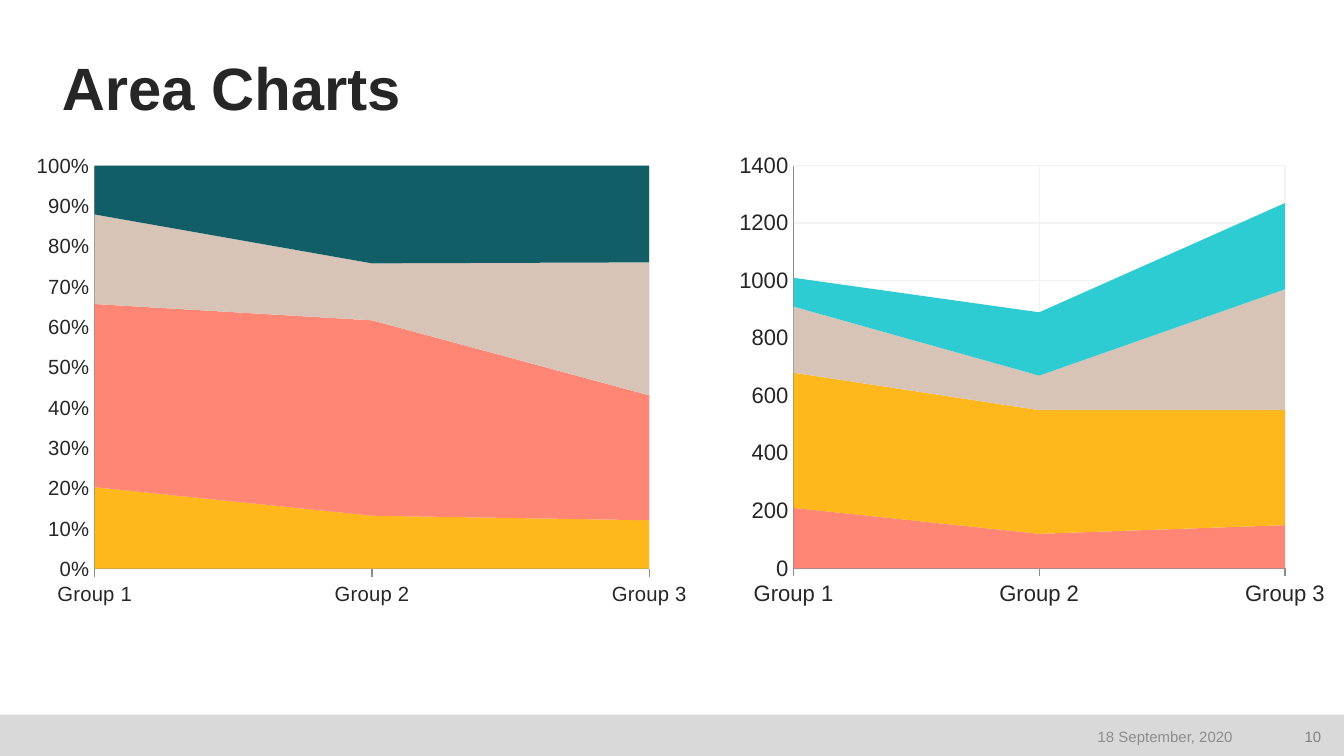
"""Build the Area Charts slide with two stacked area charts."""
from lxml import etree
from pptx import Presentation
from pptx.chart.data import CategoryChartData
from pptx.dml.color import RGBColor
from pptx.enum import chart as ch, shapes, text
from pptx.oxml.ns import qn
from pptx.util import Cm, Pt


def color(value):
    return RGBColor.from_string(value)


def add_label(words, box, size, ink, align, anchor, bold=False, inset=0):
    frame = slide.shapes.add_textbox(*map(Cm, box)).text_frame
    frame.word_wrap = True
    frame.vertical_anchor = anchor
    frame.margin_left = frame.margin_right = Cm(inset)
    frame.margin_top = frame.margin_bottom = Cm(inset / 2)
    line = frame.paragraphs[0]
    line.text = words
    line.alignment = align
    line.font.name = "Arial"
    line.font.size = Pt(size)
    line.font.bold = bold
    line.font.color.rgb = color(ink)
    return line


deck = Presentation()
deck.slide_width, deck.slide_height = Cm(25.4), Cm(14.29)
slide = deck.slides.add_slide(deck.slide_layouts[6])

footer = slide.shapes.add_shape(
    shapes.MSO_SHAPE.RECTANGLE, 0, Cm(13.51), deck.slide_width, Cm(0.78))
footer.shadow.inherit = False
footer.fill.solid()
footer.fill.fore_color.rgb = color("D9D9D9")
footer.line.fill.background()

title = add_label("Area Charts", (1.17, 1.02, 23.11, 1.32), 32, "262626",
                  text.PP_ALIGN.LEFT, text.MSO_ANCHOR.BOTTOM, bold=True)
title.line_spacing = 0.9

charts = [
    (ch.XL_CHART_TYPE.AREA_STACKED, 13.97, 11.07, 12, "General", (0.086, 0.034, 0.852, 0.886),
     [("FF8674", (210, 120, 150)), ("FFB81C", (470, 430, 400)),
      ("D7C4B7", (230, 120, 420)), ("2DCCD3", (100, 220, 300))]),
    (ch.XL_CHART_TYPE.AREA_STACKED_100, 0.69, 12.29, 11, "0%", (0.081, 0.034, 0.865, 0.886),
     [("FFB81C", (20, 13, 12)), ("FF8674", (45, 48, 31)),
      ("D7C4B7", (22, 14, 33)), ("115E67", (12, 24, 24))]),
]
for kind, left, width, size, number_format, plot_box, areas in charts:
    data = CategoryChartData()
    data.categories = ["Group 1", "Group 2", "Group 3"]
    for number, (_, values) in enumerate(areas, 1):
        data.add_series(f"Series {number}", values)
    chart = slide.shapes.add_chart(
        kind, Cm(left), Cm(2.84), Cm(width), Cm(8.61), data).chart
    chart.has_title = chart.has_legend = False
    chart.font.name = "Arial"
    chart.font.size = Pt(size)
    chart.font.color.rgb = color("262626")
    chart.plots[0].vary_by_categories = False
    for series, (fill, _) in zip(chart.plots[0].series, areas):
        series.format.fill.solid()
        series.format.fill.fore_color.rgb = color(fill)
        series.format.line.fill.background()

    for axis, tick in ((chart.category_axis, ch.XL_TICK_MARK.OUTSIDE),
                       (chart.value_axis, ch.XL_TICK_MARK.NONE)):
        axis.major_tick_mark = tick
        axis.minor_tick_mark = ch.XL_TICK_MARK.NONE
        axis.format.line.color.rgb = color("8C8C8C")
        axis.format.line.width = Pt(0.75)
        axis.has_major_gridlines = True
        grid = axis.major_gridlines.format.line
        grid.color.rgb = color("F2F2F2")
        grid.width = Pt(0.75)
    labels = chart.value_axis.tick_labels
    labels.number_format = number_format
    labels.number_format_is_linked = False

    plot_area = chart._chartSpace.chart.plotArea
    for old in plot_area.findall(qn("c:layout")):
        plot_area.remove(old)
    layout = etree.Element(qn("c:layout"))
    plot_area.insert(0, layout)
    manual = etree.SubElement(layout, qn("c:manualLayout"))
    settings = [("layoutTarget", "inner"), ("xMode", "edge"), ("yMode", "edge")]
    for tag, value in settings + list(zip("xywh", plot_box)):
        etree.SubElement(manual, qn(f"c:{tag}")).set("val", str(value))

for words, left, width, ink in (("18 September, 2020", 17.83, 5.72, "8C8C8C"),
                                ("10", 24.28, 0.94, "808080")):
    add_label(words, (left, 13.59, width, 0.66), 8, ink,
              text.PP_ALIGN.RIGHT, text.MSO_ANCHOR.MIDDLE, inset=0.25)

deck.save("out.pptx")
